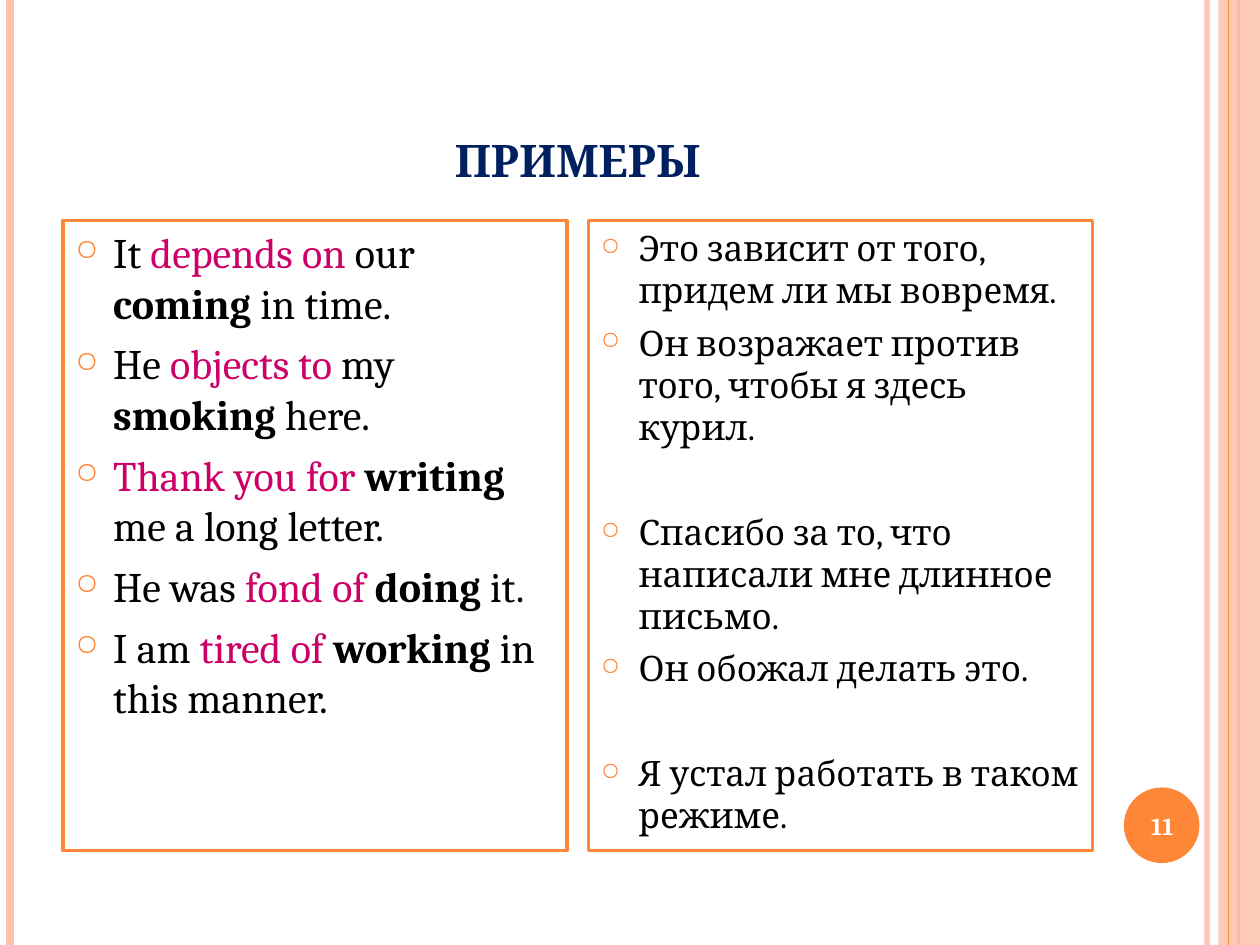
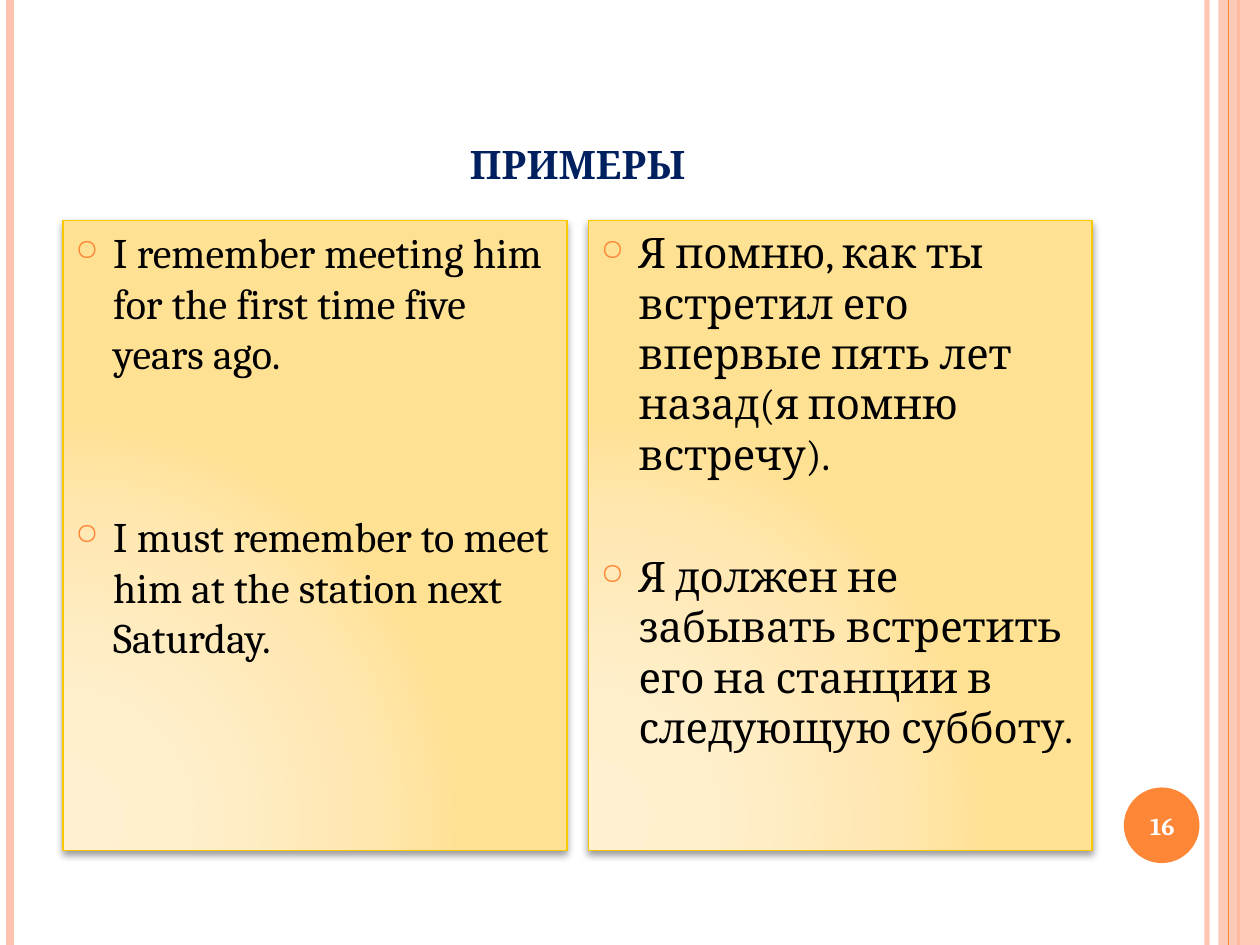
from dataclasses import dataclass
from typing import Optional

from lxml.etree import SubElement
from pptx import Presentation
from pptx.dml.color import RGBColor
from pptx.enum.shapes import MSO_CONNECTOR, MSO_SHAPE
from pptx.enum.text import MSO_ANCHOR, PP_ALIGN
from pptx.oxml import parse_xml
from pptx.oxml.ns import nsdecls, qn
from pptx.util import Inches, Pt


@dataclass(frozen=True)
class Theme:
    font: str = "Cambria"
    accent: str = "FE8637"
    blush: str = "FEC3AE"
    navy: str = "002060"
    pink: str = "CC0066"
    black: str = "000000"
    white: str = "FFFFFF"
    gold: str = "F8C700"
    glow: tuple = ((0, "FFF0D1"), (30, "FFEFCC"), (75, "FFE7B1"), (100, "FFE193"))
    number_size: int = 14
    paragraph_gap: int = 6


@dataclass(frozen=True)
class Rule:
    x: float
    color: str
    width: float
    alpha: int = 100


@dataclass(frozen=True)
class Span:
    text: str
    color: str = Theme.black
    bold: bool = False


@dataclass(frozen=True)
class Bullet:
    spans: tuple
    gap: int = Theme.paragraph_gap


@dataclass(frozen=True)
class Panel:
    size: int
    bullets: tuple


@dataclass(frozen=True)
class Examples:
    number: int
    title_size: int
    panels: tuple
    glowing: bool = False


THEME = Theme()
RULES_BELOW = (
    Rule(9.58, THEME.blush, 3, 93),
    Rule(0.08, THEME.blush, 4.5),
    Rule(9.83, THEME.accent, 1.5),
)
RULE_ABOVE = Rule(9.75, THEME.accent, 0.75)


def plain(text: str, gap: int = THEME.paragraph_gap) -> Bullet:
    return Bullet((Span(text),), gap)


def key(text: str) -> Span:
    return Span(text, THEME.pink)


def strong(text: str) -> Span:
    return Span(text, bold=True)


SLIDES = (
    Examples(11, 32, (
        Panel(24, (
            Bullet((Span("It "), key("depends on "), Span("our "),
                    strong("coming"), Span(" in time."))),
            Bullet((Span("He "), key("objects to "), Span("my "),
                    strong("smoking"), Span(" here."))),
            Bullet((key("Thank you for "), strong("writing"),
                    Span(" me a long letter."))),
            Bullet((Span("He was "), key("fond of "), strong("doing"),
                    Span(" it."))),
            Bullet((Span("I am "), key("tired of "), strong("working"),
                    Span(" in this manner."))),
        )),
        Panel(20, (
            plain("Это зависит от того, придем ли мы вовремя."),
            plain("Он возражает против того, чтобы я здесь курил."),
            plain("Спасибо за то, что написали мне длинное письмо.", 36),
            plain("Он обожал делать это."),
            plain("Я устал работать в таком режиме.", 36),
        )),
    )),
    Examples(16, 28, (
        Panel(24, (
            plain("I remember meeting him for the first time five years ago."),
            plain("I must remember to meet him at the station next Saturday.", 76),
        )),
        Panel(24, (
            plain("Я помню, как ты встретил его впервые пять лет назад(я помню встречу)."),
            plain("Я должен не забывать встретить его на станции в следующую субботу.", 41),
        )),
    ), glowing=True),
)


def rgb(color: str) -> RGBColor:
    return RGBColor.from_string(color)


def set_alpha(element, percent: int) -> None:
    if percent < 100:
        color = next(element.iter(qn("a:srgbClr")))
        SubElement(color, qn("a:alpha"), val=str(percent * 1000))


def style_run(r, size: int, color: str, bold: bool) -> None:
    r.font.name = THEME.font
    r.font.size = Pt(size)
    r.font.bold = bold
    r.font.color.rgb = rgb(color)


def add_rule(s, rule: Rule) -> None:
    x = Inches(rule.x)
    line = s.shapes.add_connector(MSO_CONNECTOR.STRAIGHT, x, 0, x, Inches(7.5))
    line.line.color.rgb = rgb(rule.color)
    line.line.width = Pt(rule.width)
    spPr = line._element.spPr
    set_alpha(spPr, rule.alpha)
    SubElement(spPr, qn("a:effectLst"))


def add_block(s, kind, left: float, top: float, width: float, height: float,
              fill: str, alpha: int = 100):
    sp = s.shapes.add_shape(kind, Inches(left), Inches(top), Inches(width), Inches(height))
    sp.shadow.inherit = False
    sp.fill.solid()
    sp.fill.fore_color.rgb = rgb(fill)
    set_alpha(sp._element.spPr, alpha)
    sp.line.fill.background()
    return sp


def add_label(s, text: str, left: float, top: float, width: float, height: float,
              size: int, color: str, anchor: MSO_ANCHOR):
    sp = s.shapes.add_textbox(Inches(left), Inches(top), Inches(width), Inches(height))
    tf = sp.text_frame
    tf.word_wrap = True
    tf.vertical_anchor = anchor
    tf.text = text
    p = tf.paragraphs[0]
    p.alignment = PP_ALIGN.CENTER
    style_run(p.runs[0], size, color, True)
    return p.runs[0]


def add_frame(s, title_size: int, number: int) -> None:
    for rule in RULES_BELOW:
        add_rule(s, rule)
    add_block(s, MSO_SHAPE.RECTANGLE, 9.67, 0, 0.33, 7.5, THEME.blush, 87)
    add_rule(s, RULE_ABOVE)
    add_block(s, MSO_SHAPE.OVAL, 8.92, 6.25, 0.6, 0.6, THEME.accent)
    title = add_label(s, "примеры", 0.5, 0.3, 8.17, 1.25, title_size,
                      THEME.navy, MSO_ANCHOR.BOTTOM)
    title._r.get_or_add_rPr().set("cap", "small")
    add_label(s, str(number), 8.89, 6.27, 0.67, 0.57, THEME.number_size,
              THEME.white, MSO_ANCHOR.MIDDLE)


def add_glow(sp) -> None:
    spPr = sp._element.spPr
    spPr.remove(spPr.find(qn("a:solidFill")))
    stops = "".join(
        f'<a:gs pos="{pos * 1000}"><a:srgbClr val="{color}"/></a:gs>'
        for pos, color in THEME.glow)
    spPr.insert(2, parse_xml(
        f'<a:gradFill {nsdecls("a")} rotWithShape="1"><a:gsLst>{stops}</a:gsLst>'
        '<a:path path="circle"><a:fillToRect l="5000" t="100000" r="120000" b="10000"/>'
        '</a:path></a:gradFill>'))
    shadow = SubElement(spPr.find(qn("a:effectLst")), qn("a:outerShdw"),
                        blurRad=str(Pt(4)), dist=str(Pt(2)), dir="5400000",
                        rotWithShape="0")
    color = SubElement(shadow, qn("a:srgbClr"), val=THEME.black)
    SubElement(color, qn("a:alpha"), val="40000")


def add_bullet(p, bullet: Bullet, size: int, gap: Optional[int]) -> None:
    pPr = p._p.get_or_add_pPr()
    pPr.set("marL", str(Inches(0.3)))
    pPr.set("indent", str(Inches(-0.3)))
    color = SubElement(pPr, qn("a:buClr"))
    SubElement(color, qn("a:srgbClr"), val=THEME.accent)
    SubElement(pPr, qn("a:buSzPct"), val="70000")
    SubElement(pPr, qn("a:buChar"), char="○")
    p.alignment = PP_ALIGN.LEFT
    if gap is not None:
        p.space_before = Pt(gap)
    for span in bullet.spans:
        r = p.add_run()
        r.text = span.text
        style_run(r, size, span.color, span.bold)


def add_panel(s, panel: Panel, column: int, glowing: bool) -> None:
    sp = add_block(s, MSO_SHAPE.RECTANGLE, 0.5 + 4.17 * column, 1.75, 4, 5, THEME.white)
    sp.line.color.rgb = rgb(THEME.gold if glowing else THEME.accent)
    sp.line.width = Pt(1 if glowing else 2)
    if glowing:
        add_glow(sp)
    tf = sp.text_frame
    tf.word_wrap = True
    tf.vertical_anchor = MSO_ANCHOR.TOP
    for i, bullet in enumerate(panel.bullets):
        p = tf.add_paragraph() if i else tf.paragraphs[0]
        add_bullet(p, bullet, panel.size, bullet.gap if i else None)


def main() -> None:
    prs = Presentation()
    prs.slide_width = Inches(10)
    prs.slide_height = Inches(7.5)
    for examples in SLIDES:
        s = prs.slides.add_slide(prs.slide_layouts[6])
        add_frame(s, examples.title_size, examples.number)
        for column, panel in enumerate(examples.panels):
            add_panel(s, panel, column, examples.glowing)
    prs.save("out.pptx")


if __name__ == "__main__":
    main()
